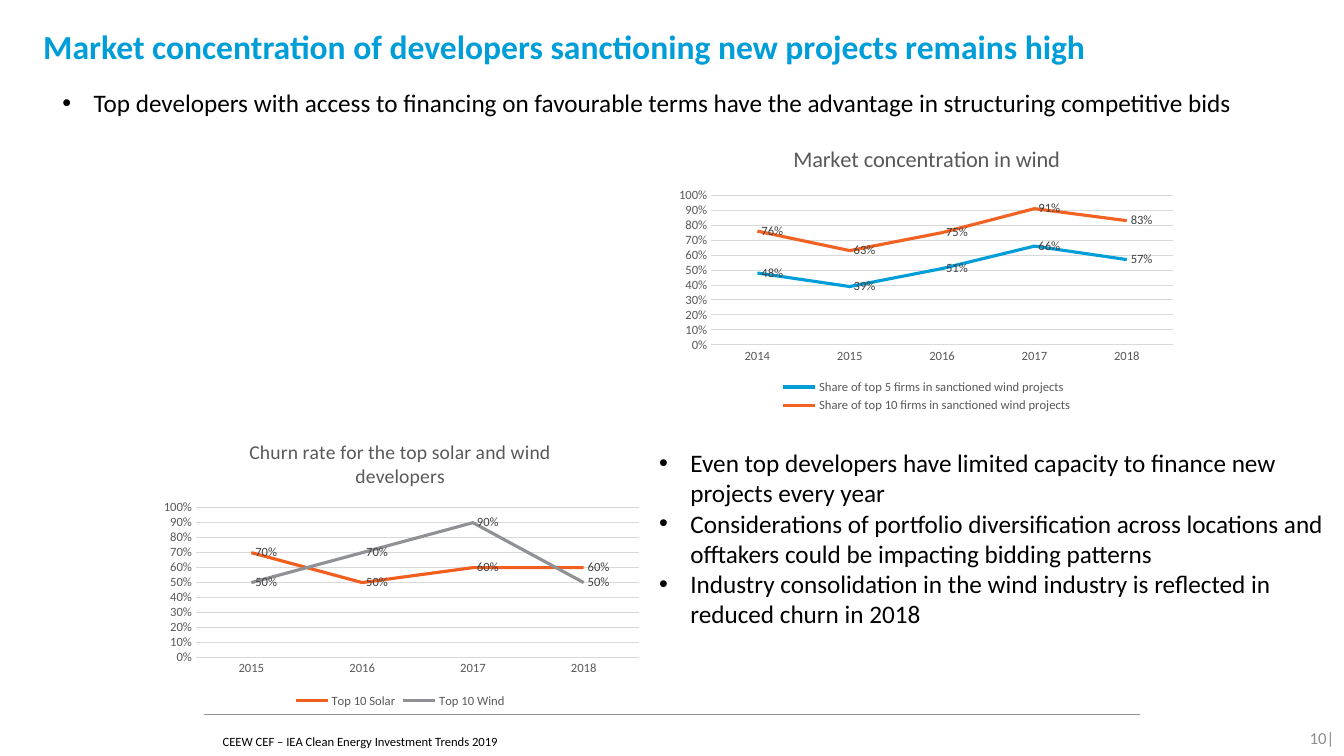
import dataclasses

import pptx
import pptx.chart.data
import pptx.dml.color
import pptx.enum.chart
import pptx.enum.shapes
import pptx.enum.text
import pptx.oxml
import pptx.oxml.ns
import pptx.util

Cm = pptx.util.Cm
Pt = pptx.util.Pt
RGB = pptx.dml.color.RGBColor.from_string
Align = pptx.enum.text.PP_ALIGN
Anchor = pptx.enum.text.MSO_ANCHOR


@dataclasses.dataclass(frozen=True)
class Theme:
    font: str = "Calibri"
    blue: str = "009ED8"
    orange: str = "F16223"
    solar: str = "F15E1D"
    grey: str = "8F9194"
    page: str = "8C8C8C"
    ink: str = "000000"
    paper: str = "FFFFFF"
    axis_text: str = "595959"
    label_text: str = "404040"
    grid: str = "D9D9D9"
    heading_size: int = 24
    body_size: int = 18
    page_size: int = 12
    small_size: int = 9


theme = Theme()


def style(font, size, color, bold=False):
    font.name = theme.font
    font.size = Pt(size)
    font.bold = bold
    font.color.rgb = RGB(color)


def add_text(box, lines, size, color, bold=False, bullets=False, align=Align.LEFT,
             anchor=Anchor.TOP, left_inset=0.25, right_inset=0.25):
    frame = slide.shapes.add_textbox(*map(Cm, box)).text_frame
    frame.word_wrap = True
    frame.vertical_anchor = anchor
    frame.margin_left, frame.margin_right = Cm(left_inset), Cm(right_inset)
    for number, line in enumerate(lines):
        paragraph = frame.paragraphs[0] if number == 0 else frame.add_paragraph()
        paragraph.text = line
        paragraph.alignment = align
        if bullets:
            properties = paragraph._p.get_or_add_pPr()
            properties.set("marL", str(Cm(0.79)))
            properties.set("indent", str(-Cm(0.79)))
            mark_font = pptx.oxml.ns.qn("a:buFont")
            properties.append(properties.makeelement(mark_font, {"typeface": "Arial"}))
            mark = pptx.oxml.ns.qn("a:buChar")
            properties.append(properties.makeelement(mark, {"char": "•"}))
        style(paragraph.font, size, color, bold)


deck = pptx.Presentation()
deck.slide_width, deck.slide_height = Cm(33.87), Cm(19.05)
slide = deck.slides.add_slide(deck.slide_layouts[6])

# Footer rule
rule = slide.shapes.add_connector(pptx.enum.shapes.MSO_CONNECTOR.STRAIGHT,
                                  Cm(5.13), Cm(18.01), Cm(28.73), Cm(18.01))
rule.line.color.rgb = RGB(theme.grey)
rule.line.width = Pt(0.75)
rule_properties = rule._element.spPr
rule_properties.append(rule_properties.makeelement(pptx.oxml.ns.qn("a:effectLst"), {}))

# Heading, page number and source
add_text((1.09, 0.53, 31.34, 2.21),
         ["Market concentration of developers sanctioning new projects remains high"],
         theme.heading_size, theme.blue, bold=True, left_inset=0, right_inset=0)
add_text((31.72, 18.08, 2.16, 1.02), ["10|"], theme.page_size, theme.page,
         align=Align.RIGHT, anchor=Anchor.MIDDLE)
add_text((5.61, 18.34, 22.78, 0.71), ["CEEW CEF – IEA Clean Energy Investment Trends 2019"],
         theme.small_size, theme.ink, anchor=Anchor.MIDDLE, left_inset=0)

# Bulleted findings
add_text((1.32, 2.08, 30.05, 2.57),
         ["Top developers with access to financing on favourable terms have the advantage "
          "in structuring competitive bids"],
         theme.body_size, theme.ink, bullets=True)
add_text((16.36, 11.15, 17.27, 5.64),
         ["Even top developers have limited capacity to finance new projects every year",
          "Considerations of portfolio diversification across locations and offtakers "
          "could be impacting bidding patterns",
          "Industry consolidation in the wind industry is reflected in reduced churn in 2018"],
         theme.body_size, theme.ink, bullets=True)

# Line charts: box, title lines, title size, plot area as shares of the box, years, series
line_charts = [
    ((16.89, 3.25, 12.93, 7.26), ["Market concentration in wind"], 16,
     (0.08, 0.23, 0.9, 0.52), range(2014, 2019),
     [("Share of top 5 firms in sanctioned wind projects", theme.blue,
       (0.48, 0.39, 0.51, 0.66, 0.57)),
      ("Share of top 10 firms in sanctioned wind projects", theme.orange,
       (0.76, 0.63, 0.75, 0.91, 0.83))]),
    ((3.81, 10.69, 12.55, 7.26),
     ["Churn rate for the top solar and wind", "developers"], 14,
     (0.09, 0.29, 0.89, 0.52), range(2015, 2019),
     [("Top 10 Solar", theme.solar, (0.7, 0.5, 0.6, 0.6)),
      ("Top 10 Wind", theme.grey, (0.5, 0.7, 0.9, 0.5))]),
]

for box, title_lines, title_size, plot_box, years, shares in line_charts:
    table = pptx.chart.data.CategoryChartData(number_format="0%")
    table.categories = [str(year) for year in years]
    for name, _, values in shares:
        table.add_series(name, values)
    chart = slide.shapes.add_chart(pptx.enum.chart.XL_CHART_TYPE.LINE,
                                   *map(Cm, box), table).chart
    style(chart.font, theme.small_size, theme.axis_text)

    # White chart background
    background = pptx.oxml.parse_xml(
        f'<c:spPr {pptx.oxml.ns.nsdecls("c", "a")}><a:solidFill>'
        f'<a:srgbClr val="{theme.paper}"/></a:solidFill><a:ln><a:noFill/></a:ln></c:spPr>')
    chart._chartSpace.find(pptx.oxml.ns.qn("c:chart")).addnext(background)

    # Chart title
    chart.has_title = True
    chart.chart_title.include_in_layout = False
    title = chart.chart_title.text_frame
    for number, line in enumerate(title_lines):
        paragraph = title.paragraphs[0] if number == 0 else title.add_paragraph()
        paragraph.text = line
        style(paragraph.font, title_size, theme.axis_text)

    # Plot area position
    plot_area = chart._chartSpace.chart.plotArea
    for old_layout in plot_area.findall(pptx.oxml.ns.qn("c:layout")):
        plot_area.remove(old_layout)
    sides = "".join(f'<c:{side} val="{share}"/>' for side, share in zip("xywh", plot_box))
    plot_area.insert(0, pptx.oxml.parse_xml(
        f'<c:layout {pptx.oxml.ns.nsdecls("c")}><c:manualLayout>'
        '<c:layoutTarget val="inner"/><c:xMode val="edge"/><c:yMode val="edge"/>'
        f'{sides}</c:manualLayout></c:layout>'))

    # Legend and axes
    chart.has_legend = True
    chart.legend.position = pptx.enum.chart.XL_LEGEND_POSITION.BOTTOM
    chart.legend.include_in_layout = False
    style(chart.legend.font, theme.small_size, theme.axis_text)
    for axis in (chart.category_axis, chart.value_axis):
        axis.major_tick_mark = pptx.enum.chart.XL_TICK_MARK.NONE
        axis.minor_tick_mark = pptx.enum.chart.XL_TICK_MARK.NONE
        style(axis.tick_labels.font, theme.small_size, theme.axis_text)
    chart.category_axis.format.line.color.rgb = RGB(theme.grid)
    chart.category_axis.format.line.width = Pt(0.75)
    scale = chart.value_axis
    scale.minimum_scale, scale.maximum_scale, scale.major_unit = 0, 1, 0.1
    scale.tick_labels.number_format = "0%"
    scale.tick_labels.number_format_is_linked = False
    scale.format.line.fill.background()
    scale.major_gridlines.format.line.color.rgb = RGB(theme.grid)
    scale.major_gridlines.format.line.width = Pt(0.75)

    # Series lines and value labels
    chart.plots[0].vary_by_categories = False
    for series, (_, color, _) in zip(chart.plots[0].series, shares):
        series.smooth = False
        series.marker.style = pptx.enum.chart.XL_MARKER_STYLE.NONE
        series.format.line.color.rgb = RGB(color)
        series.format.line.width = Pt(2.25)
        labels = series.data_labels
        labels.show_value = True
        labels.number_format = "0%"
        labels.number_format_is_linked = False
        labels.position = pptx.enum.chart.XL_LABEL_POSITION.RIGHT
        style(labels.font, theme.small_size, theme.label_text)

deck.save("out.pptx")
